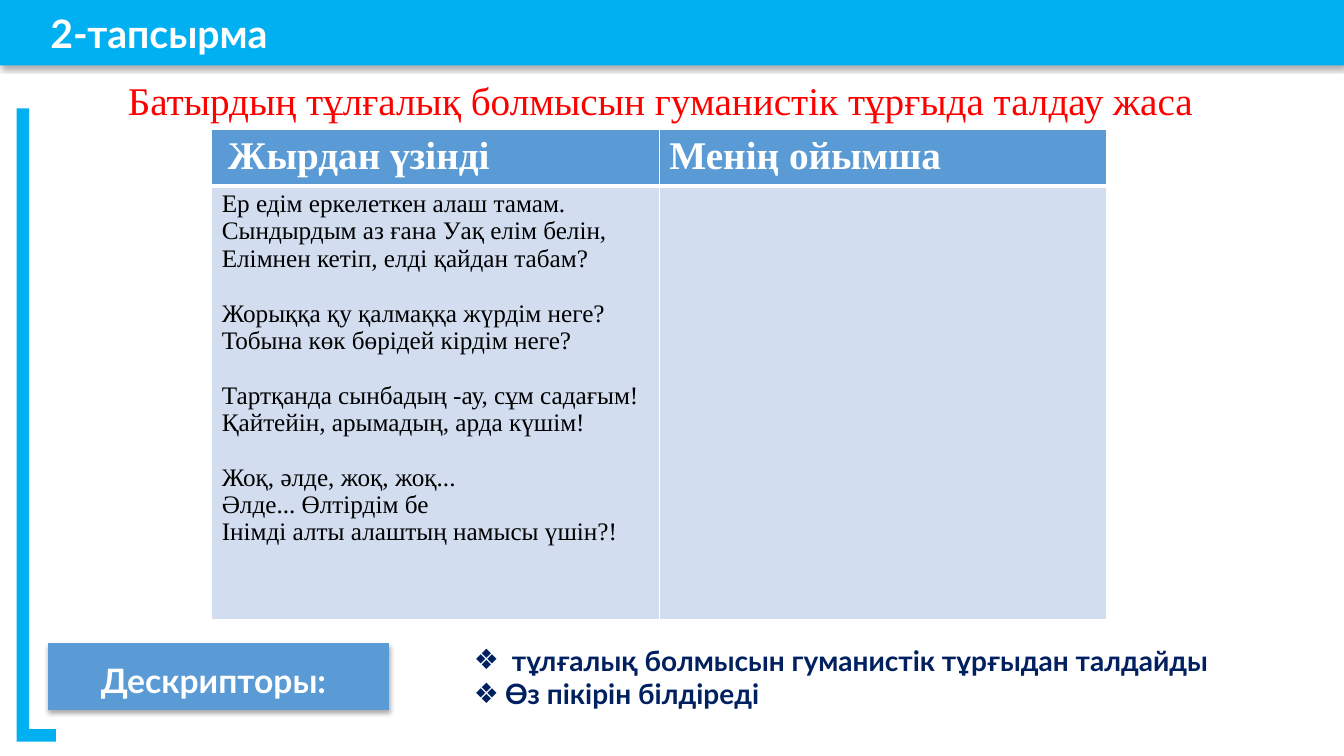
from lxml.etree import SubElement
from pptx import Presentation
from pptx.dml.color import RGBColor as Rgb
from pptx.enum.shapes import MSO_SHAPE as Shape
from pptx.enum.text import MSO_ANCHOR as Anchor, MSO_AUTO_SIZE as AutoSize, PP_ALIGN as Align
from pptx.oxml import parse_xml
from pptx.oxml.ns import nsdecls, qn
from pptx.util import Inches, Pt

COLORS = {"sky": "00B0F0", "blue": "5B9BD5", "pale": "D2DEEF", "white": "FFFFFF",
          "black": "000000", "red": "FF0000", "navy": "002060"}
STANZAS = [
    ["Ер едім еркелеткен алаш тамам.", "Сындырдым аз ғана Уақ елім белін,",
     "Елімнен кетіп, елді қайдан табам?"],
    ["Жорыққа қу қалмаққа жүрдім неге?", "Тобына көк бөрідей кірдім неге?"],
    ["Тартқанда сынбадың -ау, сұм садағым!", "Қайтейін, арымадың, арда күшім!"],
    ["Жоқ, әлде, жоқ, жоқ...", "Әлде... Өлтірдім бе", "Інімді алты алаштың намысы үшін?!"],
]
DESCRIPTORS = [" тұлғалық болмысын гуманистік тұрғыдан талдайды", "Өз пікірін білдіреді"]


class TaskPage:
    """Holds the page and its style, and adds each kind of element."""

    sans = "Lato"
    serif = "Times New Roman"

    def __init__(self, deck):
        """Add a title and content page to the deck."""
        self.page = deck.slides.add_slide(deck.slide_layouts[1])

    def color(self, name):
        """Return a named colour."""
        return Rgb.from_string(COLORS[name])

    def place(self, shape, left, top, width, height):
        """Move and size a shape, in inches."""
        shape.left, shape.top = Inches(left), Inches(top)
        shape.width, shape.height = Inches(width), Inches(height)

    def paint(self, shape, fill, shadow=False):
        """Fill a shape without outline, with an optional soft shadow."""
        shape.fill.solid()
        shape.fill.fore_color.rgb = self.color(fill)
        shape.line.fill.background()
        shape.shadow.inherit = False
        if shadow:
            effects = shape.element.spPr.find(qn("a:effectLst"))
            effects.append(parse_xml(
                f'<a:outerShdw {nsdecls("a")} blurRad="{Pt(3.5)}" dist="{Pt(2.2)}" dir="5400000" '
                'algn="t" rotWithShape="0"><a:srgbClr val="000000"><a:alpha val="32000"/>'
                '</a:srgbClr></a:outerShdw>'))

    def set_text(self, frame, lines, font, size, color, bold=False):
        """Set one left-aligned paragraph per line."""
        frame.text = "\n".join(lines)
        for para in frame.paragraphs:
            para.alignment = Align.LEFT
            para.space_before = Pt(0)
            for span in para.runs:
                span.font.name = font
                span.font.size = Pt(size)
                span.font.bold = bold
                span.font.color.rgb = self.color(color)

    def title(self, text):
        """Turn the title placeholder into the top bar."""
        bar = self.page.shapes.title
        self.place(bar, 0, 0, 13.33, 0.65)
        self.paint(bar, "sky", shadow=True)
        frame = bar.text_frame
        frame.auto_size = AutoSize.NONE
        frame.vertical_anchor = Anchor.MIDDLE
        frame.margin_left = Inches(0.5)
        self.set_text(frame, [text], self.sans, 28, "white", True)

    def bracket(self):
        """Add the corner bracket along the left edge."""
        corner = self.page.shapes.add_shape(Shape.BENT_UP_ARROW, 0, 0, 0, 0)
        self.place(corner, -2.75, 3.99, 6.22, 0.39)
        corner.rotation = 90
        for index, value in enumerate((0.317, 0, 0)):
            corner.adjustments[index] = value
        self.paint(corner, "sky")

    def instruction(self, text):
        """Add the red instruction line."""
        box = self.page.shapes.add_textbox(0, 0, 0, 0)
        self.place(box, 1.17, 0.71, 11.22, 0.57)
        box.text_frame.word_wrap = True
        self.set_text(box.text_frame, [text], self.serif, 28, "red")

    def cell_style(self, cell, fill, bottom):
        """Fill a cell and give it white borders."""
        cell.fill.solid()
        cell.fill.fore_color.rgb = self.color(fill)
        properties = cell._tc.get_or_add_tcPr()
        for index, side in enumerate("LRTB"):
            width = Pt(bottom if side == "B" else 1)
            properties.insert(index, parse_xml(
                f'<a:ln{side} {nsdecls("a")} w="{width}"><a:solidFill>'
                f'<a:srgbClr val="{COLORS["white"]}"/></a:solidFill></a:ln{side}>'))

    def poem_table(self, headings, stanzas):
        """Add the table with the poem on the left and an empty answer cell."""
        holder = self.page.shapes.add_table(
            2, len(headings), Inches(2.1), Inches(1.28), Inches(8.88), Inches(4.86))
        table = holder.table
        table.rows[0].height, table.rows[1].height = Inches(0.56), Inches(4.3)
        for index, heading in enumerate(headings):
            self.cell_style(table.cell(0, index), "blue", 3)
            self.cell_style(table.cell(1, index), "pale", 1)
            self.set_text(table.cell(0, index).text_frame, [heading], self.serif, 28, "white", True)
        table.cell(0, 0).margin_left = Inches(0.16)
        frame = table.cell(1, 0).text_frame
        self.set_text(frame, sum(stanzas, []), self.serif, 18, "black")
        openers = [stanza[0] for stanza in stanzas[1:]]
        for para in frame.paragraphs:
            para.line_spacing = 0.97
            if para.text in openers:
                para.space_before = Pt(20)

    def label(self, text):
        """Add the label box at the bottom left."""
        box = self.page.shapes.add_shape(Shape.FLOWCHART_INTERNAL_STORAGE, 0, 0, 0, 0)
        self.place(box, 0.48, 6.38, 3.38, 0.66)
        self.paint(box, "blue", shadow=True)
        box.text_frame.vertical_anchor = Anchor.MIDDLE
        self.set_text(box.text_frame, [text], self.sans, 24, "white", True)

    def bullets(self, items):
        """Put the list into the body placeholder."""
        body = self.page.placeholders[1]
        self.place(body, 4.1, 6.33, 8.38, 0.77)
        frame = body.text_frame
        frame.auto_size = AutoSize.NONE
        frame.vertical_anchor = Anchor.TOP
        self.set_text(frame, items, self.sans, 20, "navy", True)
        for para in frame.paragraphs:
            properties = para._p.get_or_add_pPr()
            properties.set("marL", str(Inches(0.81)))
            properties.set("indent", str(Inches(-0.31)))
            SubElement(properties, qn("a:buChar")).set("char", "❖")


def main():
    """Build and save the deck."""
    deck = Presentation()
    deck.slide_width, deck.slide_height = Inches(13.33), Inches(7.5)
    task = TaskPage(deck)
    task.title("2-тапсырма")
    task.bracket()
    task.instruction("Батырдың тұлғалық болмысын гуманистік тұрғыда талдау жаса")
    task.poem_table(["Жырдан үзінді", "Менің ойымша"], STANZAS)
    task.label("Дескрипторы:")
    task.bullets(DESCRIPTORS)
    deck.save("out.pptx")


if __name__ == "__main__":
    main()
